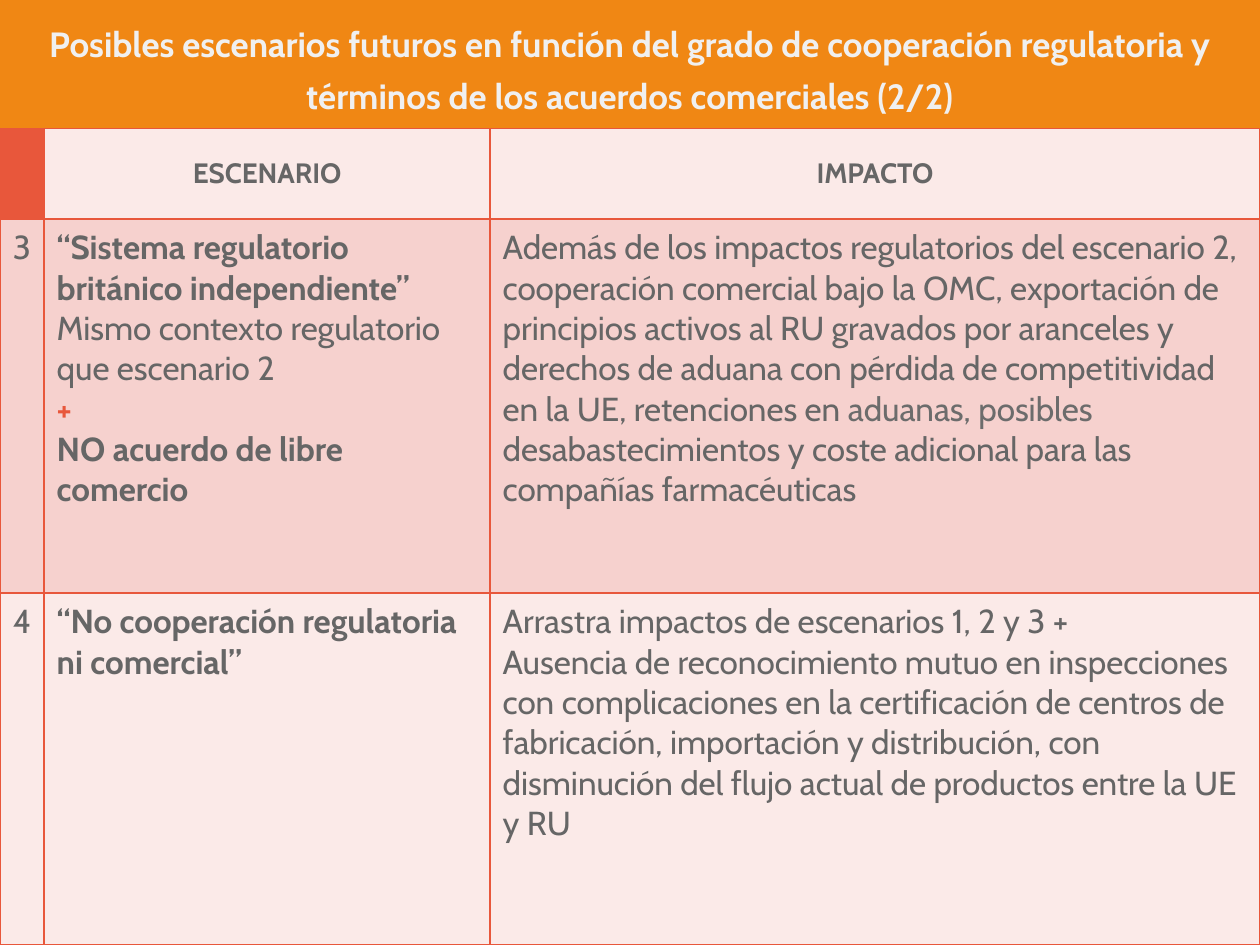
import dataclasses

import lxml.etree
import pptx
import pptx.dml.color
import pptx.enum.shapes
import pptx.enum.text
import pptx.oxml.ns
import pptx.util

ALIGN = pptx.enum.text.PP_ALIGN
ANCHOR = pptx.enum.text.MSO_ANCHOR


@dataclasses.dataclass(frozen=True)
class Theme:
    font: str = "Cabin"
    banner: str = "F08714"
    banner_text: str = "F0F0F0"
    accent: str = "E8573B"
    text: str = "666666"
    soft_text: str = "6C6C6C"
    light: str = "FBEAE8"
    dark: str = "F6D1CE"
    title_size: int = 20
    header_size: int = 16
    body_size: int = 19
    border: int = 1


THEME = Theme()
WIDTH, HEIGHT = 10, 7.5
BANNER_HEIGHT = 1.02
COLUMN_SHARES = (0.035, 0.354, 0.611)
ROW_SHARES = (0.111, 0.458, 0.431)

TITLE = ("Posibles escenarios futuros en función del grado de cooperación "
         "regulatoria y términos de los acuerdos comerciales (2/2)")
HEADERS = ("", "ESCENARIO", "IMPACTO")

# Each cell is a list of paragraphs, each paragraph a list of (text, format) spans
BOLD = {"bold": True}
SCENARIOS = (
    (
        [[("3", {})]],
        [
            [("“Sistema regulatorio británico independiente”", BOLD)],
            [("Mismo contexto regulatorio que escenario 2", {})],
            [("+", {"bold": True, "color": THEME.accent})],
            [("NO acuerdo de libre comercio", BOLD)],
        ],
        [[
            ("Además de los impactos regulatorios del escenario 2, cooperación "
             "comercial bajo la OMC, exportación de principios activos al RU "
             "gravados por aranceles y derechos de aduana con pérdida de "
             "competitividad en la UE, retenciones en ", {}),
            ("aduanas, posibles ", {"color": THEME.soft_text}),
            ("desabastecimientos y coste adicional para las compañías "
             "farmacéuticas", {}),
        ]],
    ),
    (
        [[("4", {})]],
        [[("“No cooperación regulatoria ni comercial”", BOLD)]],
        [
            [("Arrastra impactos de escenarios 1, 2 y 3 +", {})],
            [("Ausencia de reconocimiento mutuo en inspecciones con "
              "complicaciones en la certificación de centros de fabricación, "
              "importación y distribución, con disminución del flujo actual de "
              "productos entre la UE y RU", {})],
        ],
    ),
)


def paint(fill, color):
    fill.solid()
    fill.fore_color.rgb = pptx.dml.color.RGBColor.from_string(color)


def add_text(para, text, *, size=THEME.body_size, color=THEME.text, bold=False):
    span = para.add_run()
    span.text = text
    span.font.name = THEME.font
    span.font.size = pptx.util.Pt(size)
    span.font.bold = bold
    span.font.color.rgb = pptx.dml.color.RGBColor.from_string(color)


def add_borders(cell):
    properties = cell._tc.get_or_add_tcPr()
    name = pptx.oxml.ns.qn
    for side in ("a:lnL", "a:lnR", "a:lnT", "a:lnB"):
        line = lxml.etree.SubElement(
            properties, name(side), w=str(pptx.util.Pt(THEME.border)))
        solid = lxml.etree.SubElement(line, name("a:solidFill"))
        lxml.etree.SubElement(solid, name("a:srgbClr"), val=THEME.accent)


def fill_cell(cell, paragraphs, *, fill, align=ALIGN.LEFT, anchor=ANCHOR.TOP):
    add_borders(cell)
    paint(cell.fill, fill)
    cell.vertical_anchor = anchor
    cell.margin_left = cell.margin_right = pptx.util.Inches(0.1)
    cell.margin_top = cell.margin_bottom = pptx.util.Inches(0.07)
    for index, spans in enumerate(paragraphs):
        frame = cell.text_frame
        para = frame.add_paragraph() if index else frame.paragraphs[0]
        para.alignment = align
        for text, style in spans:
            add_text(para, text, **style)


def add_banner(page, box):
    banner = page.shapes.add_shape(
        pptx.enum.shapes.MSO_SHAPE.RECTANGLE, *map(pptx.util.Inches, box))
    banner.shadow.inherit = False
    paint(banner.fill, THEME.banner)
    banner.line.fill.background()
    frame = banner.text_frame
    frame.word_wrap = True
    frame.vertical_anchor = ANCHOR.MIDDLE
    para = frame.paragraphs[0]
    para.alignment = ALIGN.CENTER
    para.line_spacing = pptx.util.Pt(30)
    add_text(para, TITLE, size=THEME.title_size, color=THEME.banner_text, bold=True)


def add_scenario_table(page, box):
    width, height = box[2:]
    table = page.shapes.add_table(
        len(ROW_SHARES), len(COLUMN_SHARES), *map(pptx.util.Inches, box)).table
    table.first_row = table.horz_banding = False
    for column, share in zip(table.columns, COLUMN_SHARES):
        column.width = pptx.util.Inches(width * share)
    for row, share in zip(table.rows, ROW_SHARES):
        row.height = pptx.util.Inches(height * share)

    # Header row
    style = {"size": THEME.header_size, "bold": True}
    for index, header in enumerate(HEADERS):
        fill_cell(table.cell(0, index), [[(header, style)]] if header else [],
                  fill=THEME.light if header else THEME.accent,
                  align=ALIGN.CENTER, anchor=ANCHOR.MIDDLE)

    # Scenario rows in alternating tints
    for row, scenario in enumerate(SCENARIOS, start=1):
        for index, paragraphs in enumerate(scenario):
            fill_cell(table.cell(row, index), paragraphs,
                      fill=THEME.dark if row % 2 else THEME.light,
                      align=ALIGN.LEFT if index else ALIGN.CENTER)


def main():
    deck = pptx.Presentation()
    deck.slide_width = pptx.util.Inches(WIDTH)
    deck.slide_height = pptx.util.Inches(HEIGHT)
    page = deck.slides.add_slide(deck.slide_layouts[6])
    add_banner(page, (0, 0, WIDTH, BANNER_HEIGHT))
    add_scenario_table(page, (0, BANNER_HEIGHT, WIDTH, HEIGHT - BANNER_HEIGHT))
    deck.save("out.pptx")


if __name__ == "__main__":
    main()
